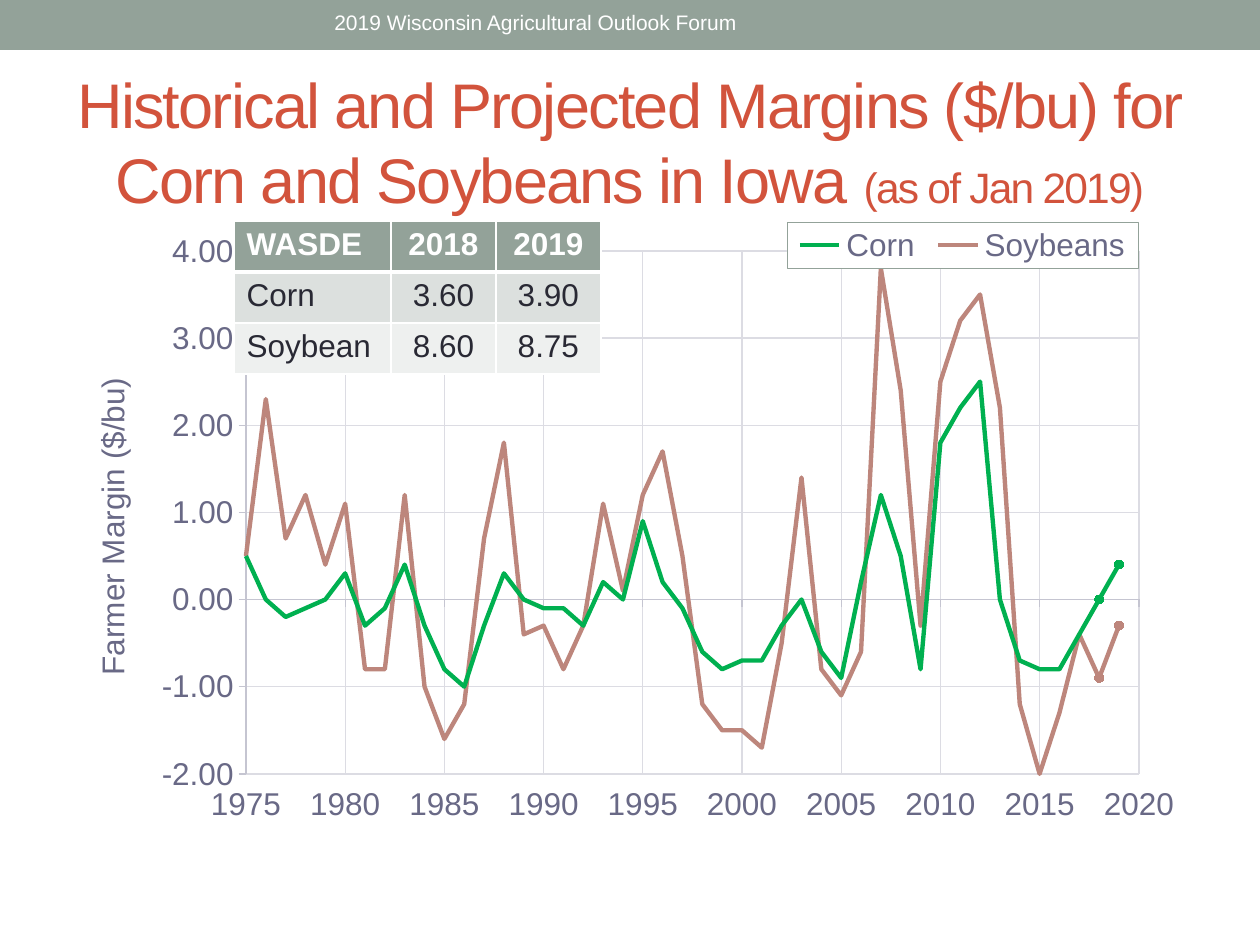
import pptx
import pptx.chart.data
import pptx.dml.color
import pptx.enum.chart
import pptx.enum.shapes
import pptx.enum.text
import pptx.oxml
import pptx.oxml.ns
import pptx.util

THEME = {
    "font": "Arial", "bar": "93A299", "title": "D2533C", "white": "FFFFFF",
    "text": "292934", "axis": "696986", "axis_line": "C5C5D1", "grid": "DCDCE3",
    "rows": ["93A299", "DCE0DE", "EEF0EF"],
    "header_size": 12, "title_size": 36, "note_size": 24.3, "body_size": 18,
}
HEADER = "2019 Wisconsin Agricultural Outlook Forum"
TITLE = [("Historical and Projected Margins ($/bu) for Corn and Soybeans in Iowa ", THEME["title_size"]),
         ("(as of Jan 2019)", THEME["note_size"])]
TABLE = [["WASDE", "2018", "2019"], ["Corn", "3.60", "3.90"], ["Soybean", "8.60", "8.75"]]
COLUMN_WIDTHS = [157, 105, 105]
ROW_HEIGHT = 51
FIRST_YEAR = 1975
PROJECTED_YEARS = 2
MARGINS = {
    "Corn": ("00B050", [
        0.5, 0, -0.2, -0.1, 0, 0.3, -0.3, -0.1, 0.4, -0.3, -0.8, -1, -0.3, 0.3, 0,
        -0.1, -0.1, -0.3, 0.2, 0, 0.9, 0.2, -0.1, -0.6, -0.8, -0.7, -0.7, -0.3, 0, -0.6,
        -0.9, 0.2, 1.2, 0.5, -0.8, 1.8, 2.2, 2.5, 0, -0.7, -0.8, -0.8, -0.4, 0, 0.4]),
    "Soybeans": ("BD867C", [
        0.5, 2.3, 0.7, 1.2, 0.4, 1.1, -0.8, -0.8, 1.2, -1, -1.6, -1.2, 0.7, 1.8, -0.4,
        -0.3, -0.8, -0.3, 1.1, 0.1, 1.2, 1.7, 0.5, -1.2, -1.5, -1.5, -1.7, -0.5, 1.4, -0.8,
        -1.1, -0.6, 3.8, 2.4, -0.3, 2.5, 3.2, 3.5, 2.2, -1.2, -2, -1.3, -0.4, -0.9, -0.3]),
}
CHART_BOX = (63, 220, 1134, 672)
PLOT_BOX = (246, 251, 893, 523)
LEGEND_BOX = (787, 222, 351, 46)
AXIS_TITLE_POSITION = (86, 372)

ALIGN = pptx.enum.text.PP_ALIGN
MIDDLE = pptx.enum.text.MSO_ANCHOR.MIDDLE


def px(length):
    return pptx.util.Emu(round(length * 914400 / 126))


def box(*lengths):
    return [px(length) for length in lengths]


def rgb(color):
    return pptx.dml.color.RGBColor.from_string(color)


def style_font(font, size, color, bold=False):
    font.name, font.size, font.bold = THEME["font"], pptx.util.Pt(size), bold
    font.color.rgb = rgb(color)


def style_line(line, color, width):
    line.color.rgb, line.width = rgb(color), pptx.util.Pt(width)


def add_run(paragraph, text, size, color, bold=False):
    run = paragraph.add_run()
    run.text = text
    style_font(run.font, size, color, bold)
    return run


def add_text_box(slide, place):
    frame = slide.shapes.add_textbox(*box(*place)).text_frame
    frame.word_wrap, frame.vertical_anchor = True, MIDDLE
    frame.paragraphs[0].alignment = ALIGN.CENTER
    return frame


def add_header(slide):
    bar = slide.shapes.add_shape(pptx.enum.shapes.MSO_SHAPE.RECTANGLE, *box(0, 0, 1260, 50))
    bar.shadow.inherit = False
    bar.fill.solid()
    bar.fill.fore_color.rgb = rgb(THEME["bar"])
    bar.line.fill.background()
    frame = add_text_box(slide, (314, 0, 567, 45))
    frame.margin_right = px(136)
    add_run(frame.paragraphs[0], HEADER, THEME["header_size"], THEME["white"])


def add_title(slide):
    frame = add_text_box(slide, (63, 73, 1134, 136))
    frame.margin_left = frame.margin_right = 0
    frame.paragraphs[0].line_spacing = 1.0
    for text, size in TITLE:
        run = add_run(frame.paragraphs[0], text, size, THEME["title"])
        run.font._element.set("spc", "-100")


def chart_xml(tag, content):
    return pptx.oxml.parse_xml(f'<c:{tag} {pptx.oxml.ns.nsdecls("c", "a")}>{content}</c:{tag}>')


def manual_layout(place, inner=False):
    """Layout element for a slide position, as fractions of the chart box."""
    left, top, width, height = CHART_BOX
    x, y, *size = place
    values = [("x", (x - left) / width), ("y", (y - top) / height)]
    if size:
        values += [("w", size[0] / width), ("h", size[1] / height)]
    content = '<c:layoutTarget val="inner"/>' if inner else ""
    content += '<c:xMode val="edge"/><c:yMode val="edge"/>'
    content += "".join(f'<c:{name} val="{value:.4f}"/>' for name, value in values)
    return chart_xml("layout", f"<c:manualLayout>{content}</c:manualLayout>")


def set_layout(parent, index, layout):
    for old in parent.xpath("c:layout"):
        parent.remove(old)
    parent.insert(index, layout)


def style_axis(axis, low, high, step, number_format):
    axis.minimum_scale, axis.maximum_scale, axis.major_unit = low, high, step
    axis.has_major_gridlines = True
    style_line(axis.major_gridlines.format.line, THEME["grid"], 0.75)
    style_line(axis.format.line, THEME["axis_line"], 0.75)
    axis.major_tick_mark = pptx.enum.chart.XL_TICK_MARK.OUTSIDE
    axis.minor_tick_mark = pptx.enum.chart.XL_TICK_MARK.NONE
    axis.tick_label_position = pptx.enum.chart.XL_TICK_LABEL_POSITION.LOW
    axis.tick_labels.number_format = number_format
    axis.tick_labels.number_format_is_linked = False
    style_font(axis.tick_labels.font, THEME["body_size"], THEME["axis"])


def style_series(series, color):
    series.smooth = False
    style_line(series.format.line, color, 2.5)
    series.marker.style = pptx.enum.chart.XL_MARKER_STYLE.NONE
    count = len(list(series.values))
    for index in range(count - PROJECTED_YEARS, count):
        point = series.points[index]
        style_line(point.format.line, color, 2.5)
        point.marker.style = pptx.enum.chart.XL_MARKER_STYLE.CIRCLE
        point.marker.size = 5
        point.marker.format.fill.solid()
        point.marker.format.fill.fore_color.rgb = rgb(color)
        style_line(point.marker.format.line, color, 0.75)


def add_margin_chart(slide):
    data = pptx.chart.data.XyChartData(number_format="0.00")
    for name, (_, values) in MARGINS.items():
        series = data.add_series(name)
        for year, value in enumerate(values, FIRST_YEAR):
            series.add_data_point(year, value)
    kind = pptx.enum.chart.XL_CHART_TYPE.XY_SCATTER_LINES_NO_MARKERS
    chart = slide.shapes.add_chart(kind, *box(*CHART_BOX), data).chart
    style_font(chart.font, THEME["body_size"], THEME["text"])
    chart.has_title = False
    chart.plots[0].vary_by_categories = False
    for series, (color, _) in zip(chart.plots[0].series, MARGINS.values()):
        style_series(series, color)

    style_axis(chart.category_axis, 1975, 2020, 5, "General")
    style_axis(chart.value_axis, -2, 4, 1, "#,##0.00")
    axis_title = chart.value_axis.axis_title
    add_run(axis_title.text_frame.paragraphs[0], "Farmer Margin ($/bu)", THEME["body_size"], THEME["axis"])
    body = axis_title.text_frame._txBody.bodyPr
    body.set("rot", "-5400000")
    body.set("vert", "horz")
    set_layout(axis_title._element, 1, manual_layout(AXIS_TITLE_POSITION))

    chart.has_legend = True
    chart.legend.position = pptx.enum.chart.XL_LEGEND_POSITION.BOTTOM
    chart.legend.include_in_layout = False
    style_font(chart.legend.font, THEME["body_size"], THEME["axis"])
    legend = chart.element.xpath("c:chart/c:legend")[0]
    set_layout(legend, 1, manual_layout(LEGEND_BOX))
    fill = '<a:solidFill><a:srgbClr val="{}"/></a:solidFill>'
    border = f'<a:ln w="3175">{fill.format(THEME["bar"])}</a:ln>'
    legend.xpath("c:overlay")[0].addnext(chart_xml("spPr", fill.format(THEME["white"]) + border))
    set_layout(chart.element.xpath("c:chart/c:plotArea")[0], 0, manual_layout(PLOT_BOX, inner=True))
    clear = chart_xml("spPr", "<a:noFill/><a:ln><a:noFill/></a:ln>")
    chart.element.xpath("c:chart")[0].addnext(clear)


def add_cell_borders(cell, bottom_width):
    properties = cell._tc.get_or_add_tcPr()
    for index, side in enumerate("LRTB"):
        width = pptx.util.Pt(bottom_width if side == "B" else 1)
        properties.insert(index, pptx.oxml.parse_xml(
            f'<a:ln{side} {pptx.oxml.ns.nsdecls("a")} w="{width}"><a:solidFill>'
            f'<a:srgbClr val="{THEME["white"]}"/></a:solidFill></a:ln{side}>'))


def add_price_table(slide):
    place = box(234, 221, sum(COLUMN_WIDTHS), ROW_HEIGHT * len(TABLE))
    table = slide.shapes.add_table(len(TABLE), len(COLUMN_WIDTHS), *place).table
    for column, width in zip(table.columns, COLUMN_WIDTHS):
        column.width = px(width)
    for row, texts in enumerate(TABLE):
        table.rows[row].height = px(ROW_HEIGHT)
        heading = row == 0
        for column, text in enumerate(texts):
            cell = table.cell(row, column)
            cell.fill.solid()
            cell.fill.fore_color.rgb = rgb(THEME["rows"][row])
            add_cell_borders(cell, 3 if heading else 1)
            paragraph = cell.text_frame.paragraphs[0]
            paragraph.alignment = ALIGN.CENTER if column else ALIGN.LEFT
            add_run(paragraph, text, THEME["body_size"], THEME["white" if heading else "text"], heading)


presentation = pptx.Presentation()
presentation.slide_width, presentation.slide_height = box(1260, 945)
slide = presentation.slides.add_slide(presentation.slide_layouts[6])
add_header(slide)
add_title(slide)
add_margin_chart(slide)
add_price_table(slide)
presentation.save("out.pptx")
